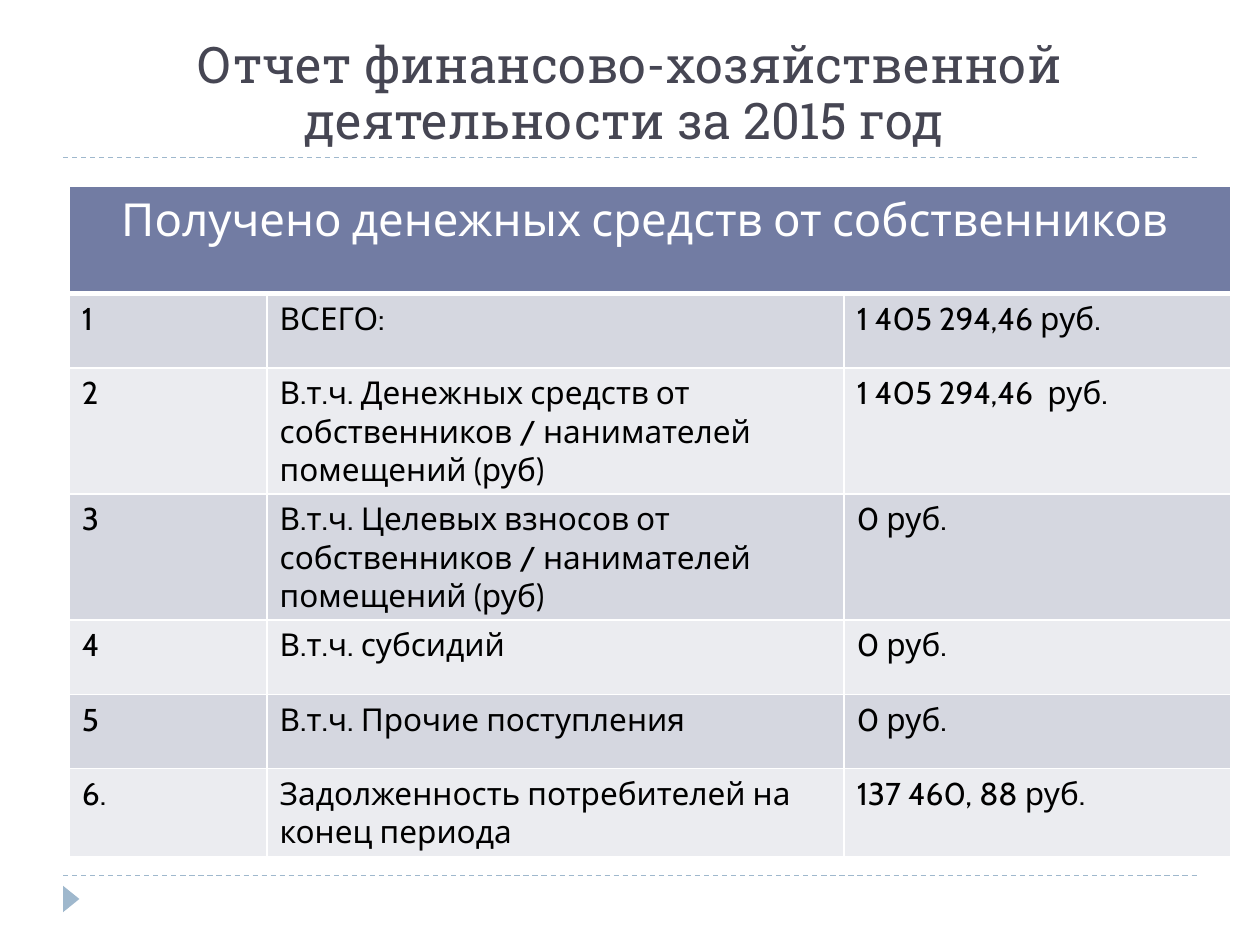
from pptx import Presentation
from pptx.dml.color import RGBColor as RGB
from pptx.enum.dml import MSO_LINE as Dash
from pptx.enum.shapes import MSO_CONNECTOR as Link, MSO_SHAPE as Shape
from pptx.enum.text import MSO_ANCHOR as Anchor, PP_ALIGN as Align
from pptx.oxml import parse_xml
from pptx.oxml.ns import nsdecls
from pptx.util import Inches, Pt

WIDE, HIGH = 10, 7.5
INK = RGB(0x46, 0x46, 0x53)
BLUE = RGB(0x9F, 0xB8, 0xCD)
HEAD = RGB(0x72, 0x7C, 0xA3)
BANDS = RGB(0xD5, 0xD7, 0xE0), RGB(0xEB, 0xEC, 0xF0)
WHITE = RGB(0xFF, 0xFF, 0xFF)
BLACK = RGB(0, 0, 0)

TITLE = "Отчет финансово-хозяйственной деятельности за 2015 год "
LABEL = "Получено денежных средств от собственников "
ITEMS = [
    ("1", "ВСЕГО:", "1 405 294,46 руб."),
    ("2", "В.т.ч. Денежных средств от собственников / нанимателей помещений (руб)",
     "1 405 294,46  руб."),
    ("3", "В.т.ч. Целевых взносов от собственников / нанимателей помещений (руб)",
     "0 руб."),
    ("4", "В.т.ч. субсидий", "0 руб."),
    ("5", "В.т.ч. Прочие поступления", "0 руб."),
    ("6.", "Задолженность потребителей на конец периода", "137 460, 88 руб."),
]
COLS = 1.57, 4.58, 3.07
ROWS = 0.85, 0.59, 0.91, 0.91, 0.59, 0.59, 0.64


def write(frame, text, font="Cabin", size=18, color=BLACK, align=Align.LEFT, pitch=None):
    frame.word_wrap = True
    para = frame.paragraphs[0]
    para.alignment = align
    para.line_spacing = pitch
    run = para.add_run()
    run.text = text
    run.font.name, run.font.size = font, Pt(size)
    run.font.color.rgb = color


def edge(cell, **widths):
    """Draw white borders; each key is a side (L, R, T, B), each value its points."""
    props = cell._tc.get_or_add_tcPr()
    for spot, (side, width) in enumerate(widths.items()):
        props.insert(spot, parse_xml(
            f'<a:ln{side} {nsdecls("a")} w="{Pt(width)}"><a:solidFill>'
            f'<a:srgbClr val="{WHITE}"/></a:solidFill></a:ln{side}>'))


class Page:
    """Places elements on one slide by shares of its width and height."""

    def __init__(self, deck):
        self.deck = deck
        deck.slide_width, deck.slide_height = Inches(WIDE), Inches(HIGH)
        self.shapes = deck.slides.add_slide(deck.slide_layouts[6]).shapes

    def area(self, left, top, width, height):
        wide, high = self.deck.slide_width, self.deck.slide_height
        return [round(n) for n in (left * wide, top * high, width * wide, height * high)]

    def rule(self, top):
        left, y, width, _ = self.area(0.05, top, 0.9, 0)
        line = self.shapes.add_connector(Link.STRAIGHT, left, y, left + width, y)
        line.line.color.rgb, line.line.width = BLUE, Pt(0.75)
        line.line.dash_style = Dash.DASH
        line._element.spPr.append(parse_xml(f'<a:effectLst {nsdecls("a")}/>'))

    def arrow(self, *area):
        mark = self.shapes.add_shape(Shape.ISOSCELES_TRIANGLE, *self.area(*area))
        mark.rotation = 90
        mark.shadow.inherit = False
        mark.fill.solid()
        mark.fill.fore_color.rgb = BLUE
        mark.line.fill.background()

    def title(self, text, *area):
        frame = self.shapes.add_textbox(*self.area(*area)).text_frame
        frame.vertical_anchor = Anchor.BOTTOM
        write(frame, text, "Roboto Slab", 28.8, INK, Align.CENTER, 0.93)

    def table(self, label, items, *area):
        grid = self.shapes.add_table(len(ROWS), len(COLS), *self.area(*area)).table
        for col, width in zip(grid.columns, COLS):
            col.width = Inches(width)
        for row, height in zip(grid.rows, ROWS):
            row.height = Inches(height)
        top = grid.cell(0, 0)
        top.merge(grid.cell(0, len(COLS) - 1))
        write(top.text_frame, label, size=26, color=WHITE, align=Align.CENTER)
        for r in range(len(ROWS)):
            for c in range(len(COLS)):
                cell = grid.cell(r, c)
                cell.fill.solid()
                cell.fill.fore_color.rgb = BANDS[(r - 1) % 2] if r else HEAD
                edge(cell, L=1, R=1, T=1, B=1 if r else 3)
                if r:
                    write(cell.text_frame, items[r - 1][c])


def main():
    deck = Presentation()
    page = Page(deck)
    for y in (6.95, 1.25):
        page.rule(y / HIGH)
    page.arrow(0.46 / WIDE, 7.07 / HIGH, 0.21 / WIDE, 0.13 / HIGH)
    page.title(TITLE, 0.05, 0.25 / HIGH, 0.9, 1 / HIGH)
    page.table(LABEL, ITEMS, 0.55 / WIDE, 1.48 / HIGH, sum(COLS) / WIDE, sum(ROWS) / HIGH)
    deck.save("out.pptx")


if __name__ == "__main__":
    main()
